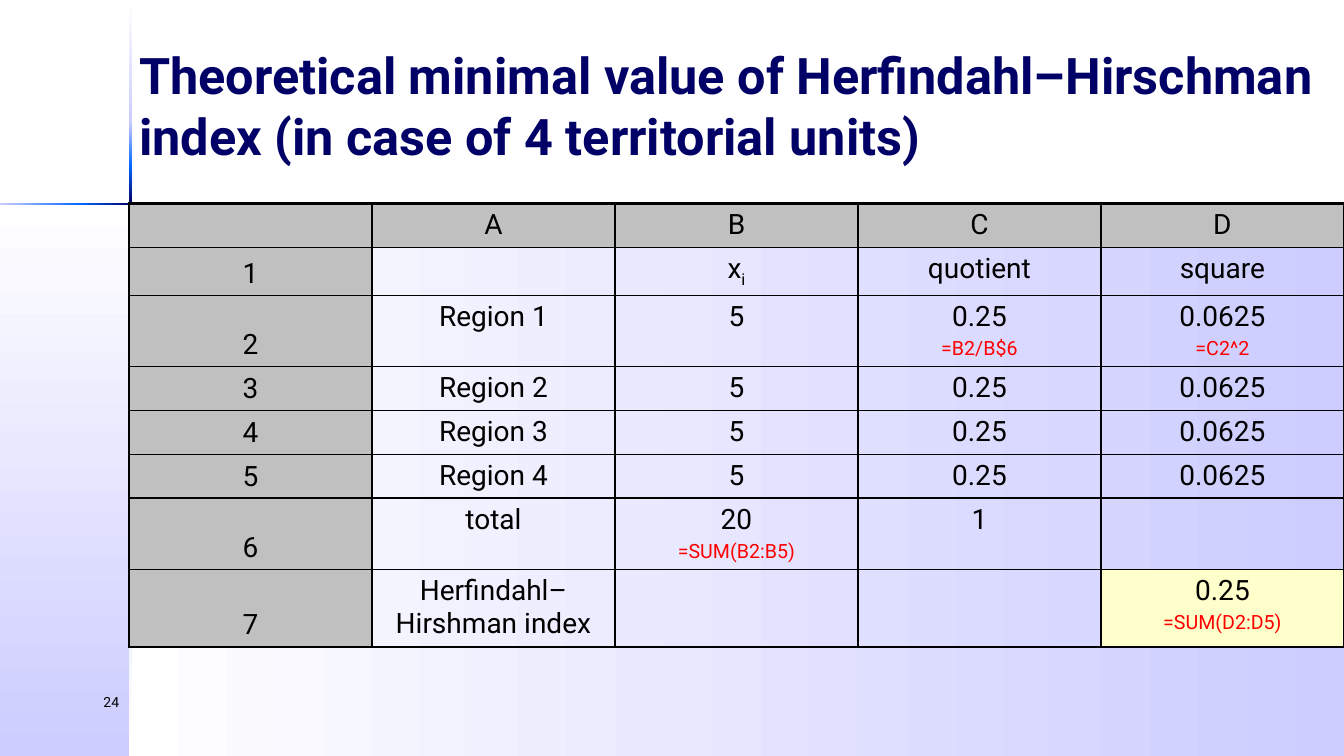
"""Build the slide on the minimal value of the Herfindahl–Hirschman index."""
import itertools

import pptx
import pptx.dml.color
import pptx.enum.shapes
import pptx.enum.text
import pptx.oxml
import pptx.oxml.ns
import pptx.util
from pptx.util import Inches

FONT = "Roboto"
BLACK, RED, NAVY, BLUE = "000000", "FF0000", "000066", "0066FF"
LILAC, WHITE, GREY, YELLOW = "CCCCFF", "FFFFFF", "C0C0C0", "FFFFCC"
SLIDE_WIDTH, SLIDE_HEIGHT = 13.33, 7.5
MARGIN, HEADER = 1.28, 2.02
RULE = 0.03

TITLE = "Theoretical minimal value of Herfindahl–Hirschman index (in case of 4 territorial units)"
PAGE_NUMBER = "24"
ROWS = [
    ["", "A", "B", "C", "D"],
    ["1", "", "x_i", "quotient", "square"],
    ["2", "Region 1", "5", "0.25\n=B2/B$6", "0.0625\n=C2^2"],
    ["3", "Region 2", "5", "0.25", "0.0625"],
    ["4", "Region 3", "5", "0.25", "0.0625"],
    ["5", "Region 4", "5", "0.25", "0.0625"],
    ["6", "total", "20\n=SUM(B2:B5)", "1", ""],
    ["7", "Herfindahl–Hirshman index", "", "", "0.25\n=SUM(D2:D5)"],
]
ROW_HEIGHTS = [0.43, 0.47, 0.69, 0.43, 0.43, 0.43, 0.69, 0.77]
VERTICAL_RULE = [(0.01, WHITE), (1.21, LILAC), (1.65, BLUE), (2.02, NAVY),
                 (2.38, BLUE), (2.82, LILAC), (7.5, WHITE)]
HORIZONTAL_RULE = [(0, LILAC), (0.81, BLUE), (1.3, NAVY), (1.78, BLUE),
                   (2.36, LILAC), (13.33, WHITE)]


def colour(value):
    return pptx.dml.color.RGBColor.from_string(value)


def add_run(para, text, size, tint=BLACK, bold=False):
    span = para.add_run()
    span.text = text
    span.font.name = FONT
    span.font.size = pptx.util.Pt(size)
    span.font.bold = bold
    span.font.color.rgb = colour(tint)
    return span


def add_gradient(page, left, top, width, height, start, end, downward):
    panel = page.shapes.add_shape(
        pptx.enum.shapes.MSO_SHAPE.RECTANGLE,
        Inches(left), Inches(top), Inches(width), Inches(height))
    panel.shadow.inherit = False
    panel.line.fill.background()
    panel.fill.gradient()
    panel.fill.gradient_angle = 270 if downward else 0
    for stop, tint in zip(panel.fill.gradient_stops, (start, end)):
        stop.color.rgb = colour(tint)


def add_backdrop(page):
    body = SLIDE_HEIGHT - HEADER
    add_gradient(page, MARGIN, HEADER, SLIDE_WIDTH - MARGIN, body, WHITE, LILAC, False)
    add_gradient(page, 0, HEADER, MARGIN, body, WHITE, LILAC, True)
    for (top, start), (bottom, end) in itertools.pairwise(VERTICAL_RULE):
        add_gradient(page, MARGIN, top, RULE, bottom - top, start, end, True)
    for (left, start), (right, end) in itertools.pairwise(HORIZONTAL_RULE):
        add_gradient(page, left, HEADER - 0.01, right - left, 0.02, start, end, False)


def set_borders(cell, widths):
    properties = cell._tc.get_or_add_tcPr()
    for side, width in zip("LRTB", widths):
        properties.append(pptx.oxml.parse_xml(
            f'<a:ln{side} {pptx.oxml.ns.nsdecls("a")} w="{int(width * 12700)}">'
            f'<a:solidFill><a:srgbClr val="{BLACK}"/></a:solidFill></a:ln{side}>'))


def write_cell(cell, text):
    value, _, formula = text.partition("\n")
    base, _, subscript = value.partition("_")
    para = cell.text_frame.paragraphs[0]
    para.alignment = pptx.enum.text.PP_ALIGN.CENTER
    add_run(para, base, 20)
    if subscript:
        span = add_run(para, subscript, 20)
        span._r.get_or_add_rPr().set("baseline", "-25000")
    if formula:
        para = cell.text_frame.add_paragraph()
        para.alignment = pptx.enum.text.PP_ALIGN.CENTER
        para.space_before = pptx.util.Pt(2.8)
        add_run(para, formula, 14, RED)


def add_index_table(page):
    last_row, last_column = len(ROWS) - 1, len(ROWS[0]) - 1
    table = page.shapes.add_table(
        len(ROWS), len(ROWS[0]), Inches(MARGIN), Inches(HEADER),
        Inches(SLIDE_WIDTH - MARGIN), Inches(sum(ROW_HEIGHTS))).table
    table.first_row = table.horz_banding = False
    for row, height in zip(table.rows, ROW_HEIGHTS):
        row.height = Inches(height)
    for r, texts in enumerate(ROWS):
        for c, text in enumerate(texts):
            cell = table.cell(r, c)
            outer = (c == 0, c == last_column, r == 0, r == last_row)
            set_borders(cell, [2.25 if edge else 1 for edge in outer])
            if r == 0 or c == 0:
                fill = GREY
            else:
                fill = YELLOW if (r, c) == (last_row, last_column) else None
            if fill:
                cell.fill.solid()
                cell.fill.fore_color.rgb = colour(fill)
            else:
                cell.fill.background()
            if c == 0 and r > 0:
                cell.vertical_anchor = pptx.enum.text.MSO_ANCHOR.BOTTOM
            if text:
                write_cell(cell, text)


def add_title(page):
    title = page.shapes.title
    title.left, title.top = Inches(MARGIN), Inches(0)
    title.width, title.height = Inches(SLIDE_WIDTH - MARGIN), Inches(HEADER)
    frame = title.text_frame
    frame.word_wrap = True
    frame.auto_size = pptx.enum.text.MSO_AUTO_SIZE.NONE
    frame.vertical_anchor = pptx.enum.text.MSO_ANCHOR.BOTTOM
    frame.margin_bottom = Inches(0.38)
    para = frame.paragraphs[0]
    para.alignment = pptx.enum.text.PP_ALIGN.LEFT
    add_run(para, TITLE, 36, NAVY, True)


def add_page_number(page):
    box = page.shapes.add_textbox(Inches(0), Inches(6.83), Inches(MARGIN), Inches(0.5))
    box.text_frame.word_wrap = True
    para = box.text_frame.paragraphs[0]
    para.alignment = pptx.enum.text.PP_ALIGN.RIGHT
    add_run(para, PAGE_NUMBER, 10)


def main():
    deck = pptx.Presentation()
    deck.slide_width, deck.slide_height = Inches(SLIDE_WIDTH), Inches(SLIDE_HEIGHT)
    page = deck.slides.add_slide(deck.slide_layouts[5])
    add_backdrop(page)
    add_page_number(page)
    add_title(page)
    add_index_table(page)
    deck.save("out.pptx")


if __name__ == "__main__":
    main()
